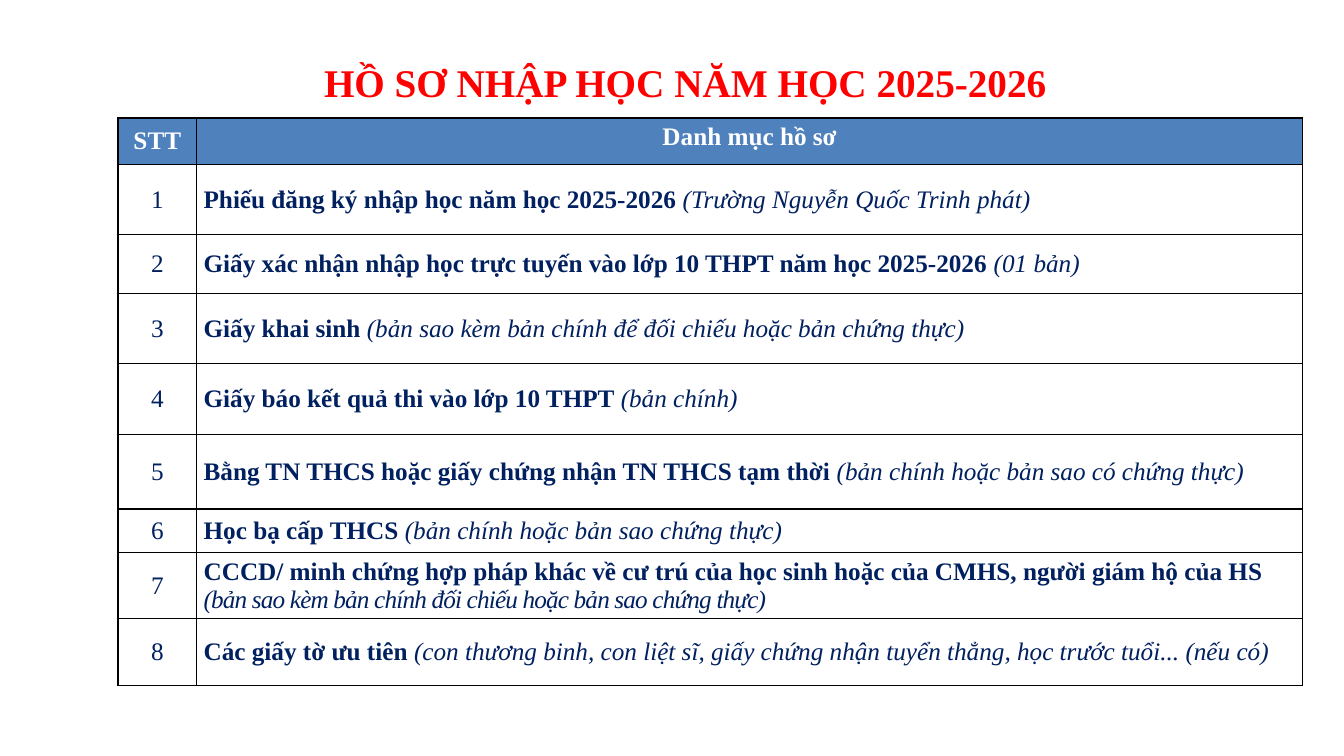
"""Builds the slide listing the documents needed for school enrolment."""
from lxml.etree import SubElement
from pptx import Presentation
from pptx.dml.color import RGBColor
from pptx.enum.text import MSO_ANCHOR, MSO_AUTO_SIZE, PP_ALIGN
from pptx.oxml.ns import qn
from pptx.util import Inches, Pt

COLORS = {"title": "FF0000", "header": "4F81BD", "header_text": "FFFFFF",
          "body": "FFFFFF", "text": "002060", "border": "000000"}
FONT = "Times New Roman"
COLUMN_WIDTHS = (0.78, 10.97)
ROW_HEIGHTS = (0.46, 0.7, 0.58, 0.7, 0.7, 0.74, 0.43, 0.66, 0.66)
HEADERS = ("STT", "Danh mục hồ sơ")
DOCUMENTS = (
    ("Phiếu đăng ký nhập học năm học 2025-2026 ",
     "(Trường Nguyễn Quốc Trinh phát)", 0),
    ("Giấy xác nhận nhập học trực tuyến vào lớp 10 THPT năm học 2025-2026 ",
     "(01 bản)", 0),
    ("Giấy khai sinh ",
     "(bản sao kèm bản chính để đối chiếu hoặc bản chứng thực)", 0),
    ("Giấy báo kết quả thi vào lớp 10 THPT ", "(bản chính)", 0),
    ("Bằng TN THCS hoặc giấy chứng nhận TN THCS tạm thời ",
     "(bản chính hoặc bản sao có chứng thực)", 0),
    ("Học bạ cấp THCS ", "(bản chính hoặc bản sao chứng thực)", 0),
    ("CCCD/ minh chứng hợp pháp khác về cư trú của học sinh hoặc của CMHS, "
     "người giám hộ của HS ",
     "(bản sao kèm bản chính đối chiếu hoặc bản sao chứng thực)", -0.6),
    ("Các giấy tờ ưu tiên ",
     "(con thương binh, con liệt sĩ, giấy chứng nhận tuyển thẳng, "
     "học trước tuổi... (nếu có)", 0),
)


def add_text(paragraph, text, *, size=18, color="text", bold=False,
             italic=False, spacing=0):
    """Append a formatted run to the paragraph."""
    run = paragraph.add_run()
    run.text = text
    run.font.name = FONT
    run.font.size = Pt(size)
    run.font.bold = bold
    run.font.italic = italic
    run.font.color.rgb = RGBColor.from_string(COLORS[color])
    if spacing:
        run.font._element.set("spc", str(round(spacing * 100)))


def style_cell(cell, fill, anchor=MSO_ANCHOR.MIDDLE, align=PP_ALIGN.CENTER):
    """Set borders, fill and alignment, and return the cell's paragraph."""
    properties = cell._tc.get_or_add_tcPr()
    for side in ("lnL", "lnR", "lnT", "lnB"):
        border = SubElement(properties, qn(f"a:{side}"), w=str(Pt(1)))
        solid = SubElement(border, qn("a:solidFill"))
        SubElement(solid, qn("a:srgbClr"), val=COLORS["border"])
    cell.fill.solid()
    cell.fill.fore_color.rgb = RGBColor.from_string(COLORS[fill])
    cell.vertical_anchor = anchor
    paragraph = cell.text_frame.paragraphs[0]
    paragraph.alignment = align
    return paragraph


def add_document_row(table, number, name, note, spacing):
    """Fill one numbered row with a document name and its note."""
    add_text(style_cell(table.cell(number, 0), "body"), str(number))
    document = table.cell(number, 1)
    document.margin_left = document.margin_right = Inches(0.07)
    document.margin_top = document.margin_bottom = Inches(0)
    paragraph = style_cell(document, "body", align=PP_ALIGN.LEFT)
    add_text(paragraph, name, bold=True)
    add_text(paragraph, note, italic=True, spacing=spacing)


def add_document_table(slide):
    """Add the table of enrolment documents."""
    table = slide.shapes.add_table(
        len(ROW_HEIGHTS), len(COLUMN_WIDTHS), Inches(1.17), Inches(1.17),
        Inches(sum(COLUMN_WIDTHS)), Inches(sum(ROW_HEIGHTS))).table
    for column, width in zip(table.columns, COLUMN_WIDTHS):
        column.width = Inches(width)
    for row, height in zip(table.rows, ROW_HEIGHTS):
        row.height = Inches(height)
    anchors = (MSO_ANCHOR.MIDDLE, MSO_ANCHOR.TOP)
    for column, (header, anchor) in enumerate(zip(HEADERS, anchors)):
        paragraph = style_cell(table.cell(0, column), "header", anchor)
        add_text(paragraph, header, color="header_text", bold=True)
    for number, document in enumerate(DOCUMENTS, start=1):
        add_document_row(table, number, *document)


def add_title(slide):
    """Add the slide heading."""
    frame = slide.shapes.add_textbox(
        Inches(1.3), Inches(0.53), Inches(10.99), Inches(0.57)).text_frame
    frame.word_wrap = True
    frame.auto_size = MSO_AUTO_SIZE.SHAPE_TO_FIT_TEXT
    heading = frame.paragraphs[0]
    heading.alignment = PP_ALIGN.CENTER
    add_text(heading, "HỒ SƠ NHẬP HỌC NĂM HỌC 2025-2026",
             size=28, color="title", bold=True)


def main():
    """Build and save the presentation."""
    presentation = Presentation()
    presentation.slide_width = Inches(13.33)
    presentation.slide_height = Inches(7.5)
    slide = presentation.slides.add_slide(presentation.slide_layouts[6])
    add_document_table(slide)
    add_title(slide)
    presentation.save("out.pptx")


if __name__ == "__main__":
    main()
